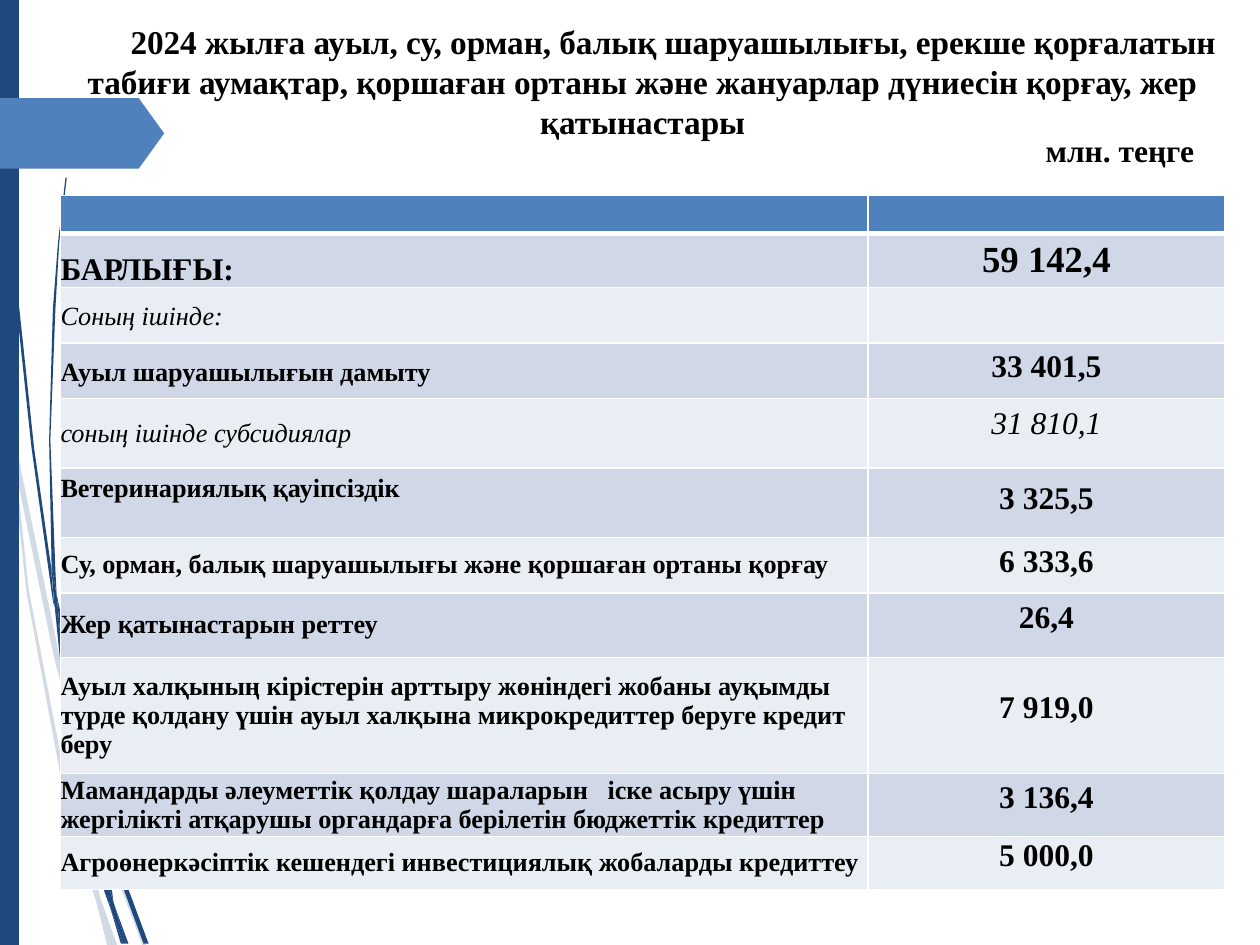
"""Build a budget slide with a table over ribbon decoration."""
from dataclasses import dataclass

from lxml import etree
from pptx import Presentation
from pptx.dml.color import RGBColor
from pptx.enum.shapes import MSO_SHAPE
from pptx.enum.text import MSO_ANCHOR, PP_ALIGN
from pptx.oxml.ns import qn
from pptx.util import Cm, Pt


@dataclass(frozen=True)
class Theme:
    font: str = "Times New Roman"
    navy: str = "1F497D"
    blue: str = "4F81BD"
    bands: tuple = ("D0D8E8", "E9EDF4")
    white: str = "FFFFFF"
    black: str = "000000"
    title: int = 19
    total: int = 21
    value: int = 18
    label: int = 15


@dataclass(frozen=True)
class Row:
    height: float
    label: str
    value: str = ""
    label_bottom: float = 0
    value_bottom: float = 0.3
    anchor: MSO_ANCHOR = MSO_ANCHOR.MIDDLE
    total: bool = False
    italic: bool = False


TITLE = ("2024 жылға ауыл, су, орман, балық шаруашылығы, ерекше қорғалатын табиғи аумақтар, "
         "қоршаған ортаны және жануарлар дүниесін қорғау, жер қатынастары")
COLUMNS = (16.28, 7.19)
HEADER_HEIGHT = 0.76
LOW = MSO_ANCHOR.BOTTOM
ROWS = (
    Row(1.09, "БАРЛЫҒЫ:", "59 142,4", 0, 0, LOW, total=True),
    Row(1.12, "Соның ішінде:", "", 0.23, 0, LOW, italic=True),
    Row(1.12, "Ауыл шаруашылығын дамыту", "33 401,5", 0.23, 0.15, LOW),
    Row(1.4, "соның ішінде субсидиялар", "31 810,1", 0, 0.38, italic=True),
    Row(1.4, "Ветеринариялық қауіпсіздік", "3 325,5", 0.56, 0.15),
    Row(1.12, "Су, орман, балық шаруашылығы және қоршаған ортаны қорғау", "6 333,6", 0, 0.15),
    Row(1.3, "Жер қатынастарын реттеу", "26,4"),
    Row(2.34, "Ауыл халқының кірістерін арттыру жөніндегі жобаны ауқымды түрде қолдану үшін "
        "ауыл халқына микрокредиттер беруге кредит беру", "7 919,0"),
    Row(1.27, "Мамандарды әлеуметтік қолдау шараларын   іске асыру үшін жергілікті атқарушы "
        "органдарға берілетін бюджеттік кредиттер", "3 136,4"),
    Row(1.07, "Агроөнеркәсіптік кешендегі инвестициялық жобаларды кредиттеу", "5 000,0"),
)
RIBBON_UNIT = Cm(0.0254)
PALE_RIBBONS = (
    ((8, 350), (6, 322), (0, 282), (0, 299), (8, 344)),
    ((43, 522), (63, 599), (64, 586), (47, 520), (11, 345), (13, 376)),
    ((69, 607), (66, 596), (66, 610), (92, 694), (113, 750), (116, 750), (95, 692)),
    ((89, 750), (93, 750), (79, 711)),
    ((70, 683), (52, 619), (23, 469), (13, 376), (8, 350), (21, 470), (49, 621), (69, 693),
     (76, 714), (74, 707)),
    ((63, 599), (65, 646), (70, 683), (72, 692), (79, 711), (78, 706), (68, 646), (66, 610)),
    ((66, 584), (82, 462), (120, 349), (171, 245), (201, 198), (234, 153), (201, 197),
     (171, 244), (118, 348), (81, 461), (64, 584), (64, 586), (66, 596)),
    ((76, 714), (85, 750), (89, 750)),
    ((66, 608), (66, 596), (64, 586), (63, 599)),
    ((72, 692), (70, 683), (74, 707), (76, 714), (89, 750), (79, 711)),
)
DARK_RIBBONS = (
    ((5, 110), (12, 233), (25, 355), (42, 477), (43, 481), (41, 457), (41, 453), (27, 355),
     (14, 232), (6, 109), (3, 48), (3, 0), (2, 0), (3, 48)),
    ((66, 592), (80, 645), (80, 631), (70, 590), (45, 472), (48, 505)),
    ((85, 649), (82, 641), (83, 656), (99, 708), (114, 749), (118, 749), (102, 706)),
    ((83, 691), (73, 657), (54, 556), (48, 505), (43, 477), (51, 557), (70, 659), (83, 708),
     (88, 722), (87, 717)),
    ((45, 472), (44, 453), (40, 349), (44, 245), (47, 193), (53, 141), (52, 141), (46, 193),
     (42, 245), (39, 349), (41, 449)),
    ((100, 749), (102, 749), (91, 719)),
    ((43, 478), (48, 505), (45, 472), (41, 449), (41, 453)),
    ((83, 633), (94, 552), (119, 476), (153, 406), (173, 374), (195, 344), (173, 373),
     (153, 405), (117, 474), (92, 551), (80, 631), (83, 641)),
    ((88, 722), (96, 749), (98, 749)),
    ((80, 645), (83, 692), (87, 706), (91, 719), (90, 716), (83, 656), (81, 651)),
    ((80, 645), (81, 651), (83, 656), (83, 641), (80, 631)),
    ((87, 706), (82, 691), (87, 717), (88, 722), (98, 749), (100, 749), (91, 719)),
)


class Deck:
    def __init__(self, theme):
        self.theme = theme
        self.prs = Presentation()
        self.prs.slide_width, self.prs.slide_height = Cm(25.4), Cm(19.05)
        self.s = self.prs.slides.add_slide(self.prs.slide_layouts[6])

    def paint(self, sp, color, alpha=None):
        sp.shadow.inherit = False
        sp.line.fill.background()
        sp.fill.solid()
        sp.fill.fore_color.rgb = RGBColor.from_string(color)
        if alpha:
            clr = sp._element.spPr.find(qn("a:solidFill"))[0]
            etree.SubElement(clr, qn("a:alpha"), val=str(alpha * 1000))

    def ribbon(self, points, alpha=None):
        builder = self.s.shapes.build_freeform(*points[0], scale=RIBBON_UNIT)
        builder.add_line_segments(points[1:], close=True)
        self.paint(builder.convert_to_shape(), self.theme.navy, alpha)

    def shape(self, kind, box, color):
        sp = self.s.shapes.add_shape(kind, *map(Cm, box))
        self.paint(sp, color)
        return sp

    def set_text(self, tf, text, size, bold=True, align=PP_ALIGN.LEFT):
        tf.text = text
        p = tf.paragraphs[0]
        p.alignment = align
        for r in p.runs:
            r.font.name, r.font.size = self.theme.font, Pt(size)
            r.font.bold, r.font.italic = bold, not bold
            r.font.color.rgb = RGBColor.from_string(self.theme.black)
        return p

    def text(self, box, text, size, align=PP_ALIGN.LEFT, indent=0, inset=(0.25, 0.13)):
        tf = self.s.shapes.add_textbox(*map(Cm, box)).text_frame
        tf.word_wrap = True
        tf.margin_left = tf.margin_right = Cm(inset[0])
        tf.margin_top = tf.margin_bottom = Cm(inset[1])
        p = self.set_text(tf, text, size, align=align)
        if indent:
            p._p.get_or_add_pPr().set("indent", str(Cm(indent)))

    def cell(self, cell, color, bottom=0, anchor=MSO_ANCHOR.MIDDLE, rule=1):
        cell.margin_left = cell.margin_right = cell.margin_top = 0
        cell.margin_bottom = Cm(bottom)
        cell.vertical_anchor = anchor
        for side in "LRTB":
            width = Pt(rule if side == "B" else 1)
            ln = etree.SubElement(cell._tc.get_or_add_tcPr(), qn(f"a:ln{side}"), w=str(width))
            fill = etree.SubElement(ln, qn("a:solidFill"))
            etree.SubElement(fill, qn("a:srgbClr"), val=self.theme.white)
        cell.fill.solid()
        cell.fill.fore_color.rgb = RGBColor.from_string(color)

    def table(self, left, top, rows):
        t = self.theme
        heights = [HEADER_HEIGHT] + [row.height for row in rows]
        box = (left, top, sum(COLUMNS), sum(heights))
        table = self.s.shapes.add_table(len(heights), len(COLUMNS), *map(Cm, box)).table
        table.first_row = table.horz_banding = False
        for column, width in zip(table.columns, COLUMNS):
            column.width = Cm(width)
        for line, height in zip(table.rows, heights):
            line.height = Cm(height)
        for cell in table.rows[0].cells:
            self.cell(cell, t.blue, rule=3)
        for i, row in enumerate(rows):
            label, value = table.rows[i + 1].cells
            band = t.bands[i % 2]
            self.cell(label, band, row.label_bottom, row.anchor)
            self.cell(value, band, row.value_bottom)
            self.set_text(label.text_frame, row.label, t.value if row.total else t.label,
                          not row.italic)
            self.set_text(value.text_frame, row.value, t.total if row.total else t.value,
                          not row.italic, PP_ALIGN.CENTER)


def main():
    theme = Theme()
    deck = Deck(theme)
    for points in PALE_RIBBONS:
        deck.ribbon(points, alpha=20)
    for points in DARK_RIBBONS:
        deck.ribbon(points)
    deck.shape(MSO_SHAPE.RECTANGLE, (0, 0, 0.38, 19.05), theme.navy)
    banner = deck.shape(MSO_SHAPE.PENTAGON, (0, 1.98, 3.31, 1.42), theme.blue)
    banner.adjustments[0] = 0.36
    deck.text((0.94, 0.33, 24.03, 3.23), TITLE, theme.title, PP_ALIGN.CENTER, 1.24, (0.18, 0.1))
    deck.table(1.22, 3.94, ROWS)
    deck.text((20.83, 2.51, 3.89, 1.02), "млн. теңге", theme.value)
    deck.prs.save("out.pptx")


if __name__ == "__main__":
    main()
